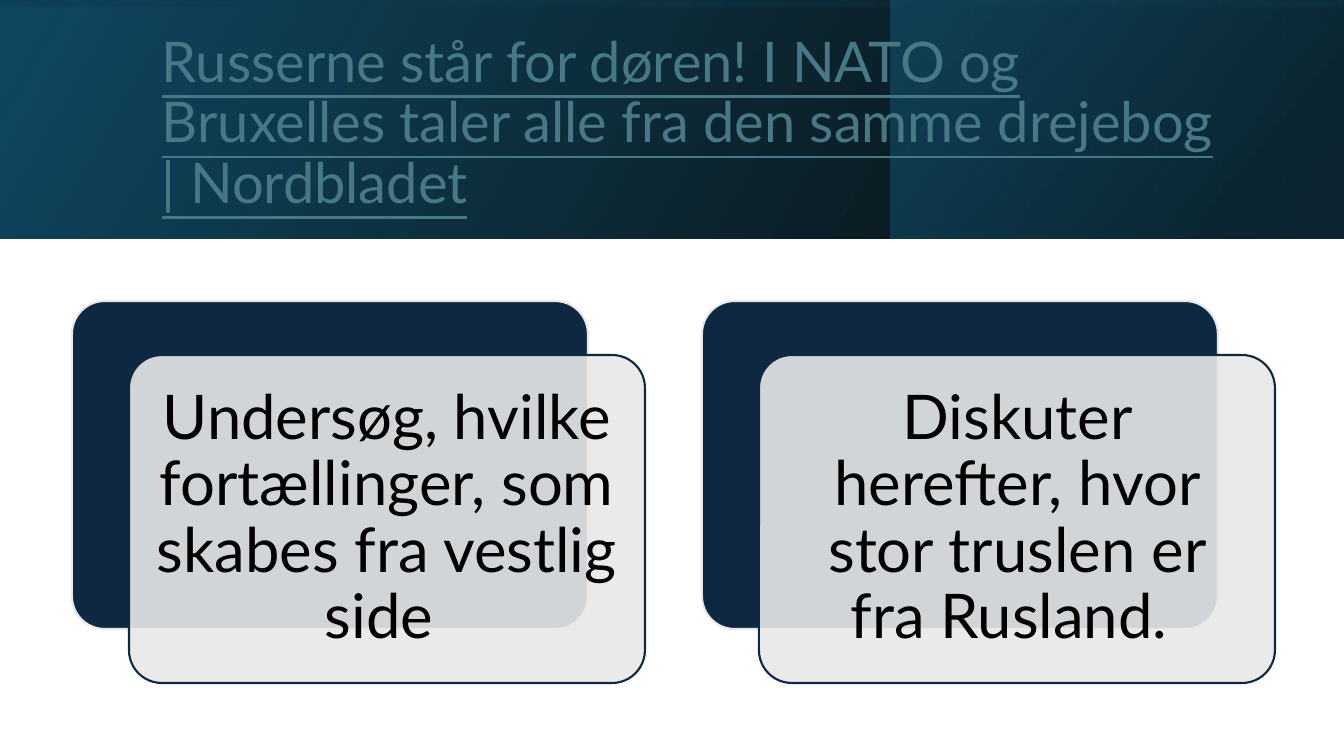
from lxml import etree
from pptx import Presentation
from pptx.dml.color import RGBColor
from pptx.enum.shapes import MSO_SHAPE
from pptx.enum.text import MSO_ANCHOR, PP_ALIGN
from pptx.oxml import parse_xml
from pptx.oxml.ns import nsdecls, qn
from pptx.util import Pt

RECT, ROUNDED = MSO_SHAPE.RECTANGLE, MSO_SHAPE.ROUNDED_RECTANGLE
MIDDLE = MSO_ANCHOR.MIDDLE
LEFT, CENTER = PP_ALIGN.LEFT, PP_ALIGN.CENTER
PX = 914400 / 100.8
W, H, BAND_H = 1344, 756, 239
COLORS = {"black": "000000", "ocean": "104862", "deep": "0B3041", "teal": "156082",
          "navy": "0E2841", "gray": "E8E8E8", "link": "467886"}


def px(*lengths):
    return [round(n * PX) for n in lengths]


def write(sp, text, size, color, align, margins):
    tf = sp.text_frame
    tf.word_wrap = True
    tf.vertical_anchor = MIDDLE
    sides = ("margin_left", "margin_top", "margin_right", "margin_bottom")
    for side, value in zip(sides, px(*margins)):
        setattr(tf, side, value)
    p = tf.paragraphs[0]
    p.alignment = align
    p.line_spacing = 0.9
    r = p.add_run()
    r.text = text
    for name, value in {"name": "Lato", "size": Pt(size)}.items():
        setattr(r.font, name, value)
    r.font.color.rgb = RGBColor.from_string(COLORS[color])
    return r


prs = Presentation()
prs.slide_width, prs.slide_height = px(W, H)
s = prs.slides.add_slide(prs.slide_layouts[6])

# Header band: three mirrored gradient layers (box, rotation, angle, stops)
half_gap = (W - BAND_H) / 2
layers = [
    ((0, 0, W, BAND_H), 0, 330, [(0, "black", 96), (100, "ocean", 100)]),
    ((891, 0, 452, BAND_H), 0, 320, [(19, "deep", 68), (100, "teal", 48)]),
    ((half_gap, -half_gap, BAND_H, W), 270, 350, [(23, "ocean", 16), (99, "black", 45)]),
]
for box, rotation, angle, stops in layers:
    sp = s.shapes.add_shape(RECT, *px(*box))
    sp.shadow.inherit = False
    sp.line.fill.background()
    sp.rotation = rotation
    spPr = sp._element.spPr
    spPr.find(qn("a:xfrm")).set("flipH", "1")
    gs = "".join(
        f'<a:gs pos="{pos * 1000}"><a:srgbClr val="{COLORS[color]}">'
        f'<a:alpha val="{alpha * 1000}"/></a:srgbClr></a:gs>'
        for pos, color, alpha in stops)
    spPr.find(qn("a:prstGeom")).addnext(parse_xml(
        f'<a:gradFill {nsdecls("a")} rotWithShape="1"><a:gsLst>{gs}</a:gsLst>'
        f'<a:lin ang="{angle * 60000}" scaled="0"/></a:gradFill>'))

# Title
title = s.shapes.add_textbox(*px(152, 38, 1072, 173))
r = write(title, "Russerne står for døren! I NATO og Bruxelles taler alle fra "
          "den samme drejebog | Nordbladet", 40, "link", LEFT, (10, 5, 8, 5))
r.font.underline = True

# Task cards: a navy back plate with a translucent text plate in front
tasks = ["Undersøg, hvilke fortællinger, som skabes fra vestlig side ",
         "Diskuter herefter, hvor stor truslen er fra Rusland. "]
for i, task in enumerate(tasks):
    x, y = 72 + 630 * i, 301
    for dx, dy, fill, line in [(0, 0, "navy", "gray"), (57, 54, "gray", "navy")]:
        sp = s.shapes.add_shape(ROUNDED, *px(x + dx, y + dy, 516, 328))
        sp.shadow.inherit = False
        sp.adjustments[0] = 0.1
        sp.fill.solid()
        sp.fill.fore_color.rgb = RGBColor.from_string(COLORS[fill])
        sp.line.color.rgb = RGBColor.from_string(COLORS[line])
        sp.line.width = Pt(1.5)
    clr = sp._element.spPr.find(qn("a:solidFill")).find(qn("a:srgbClr"))
    etree.SubElement(clr, qn("a:alpha")).set("val", "90000")
    write(sp, task, 44, "black", CENTER, (18, 18, 18, 18))

prs.save("out.pptx")
